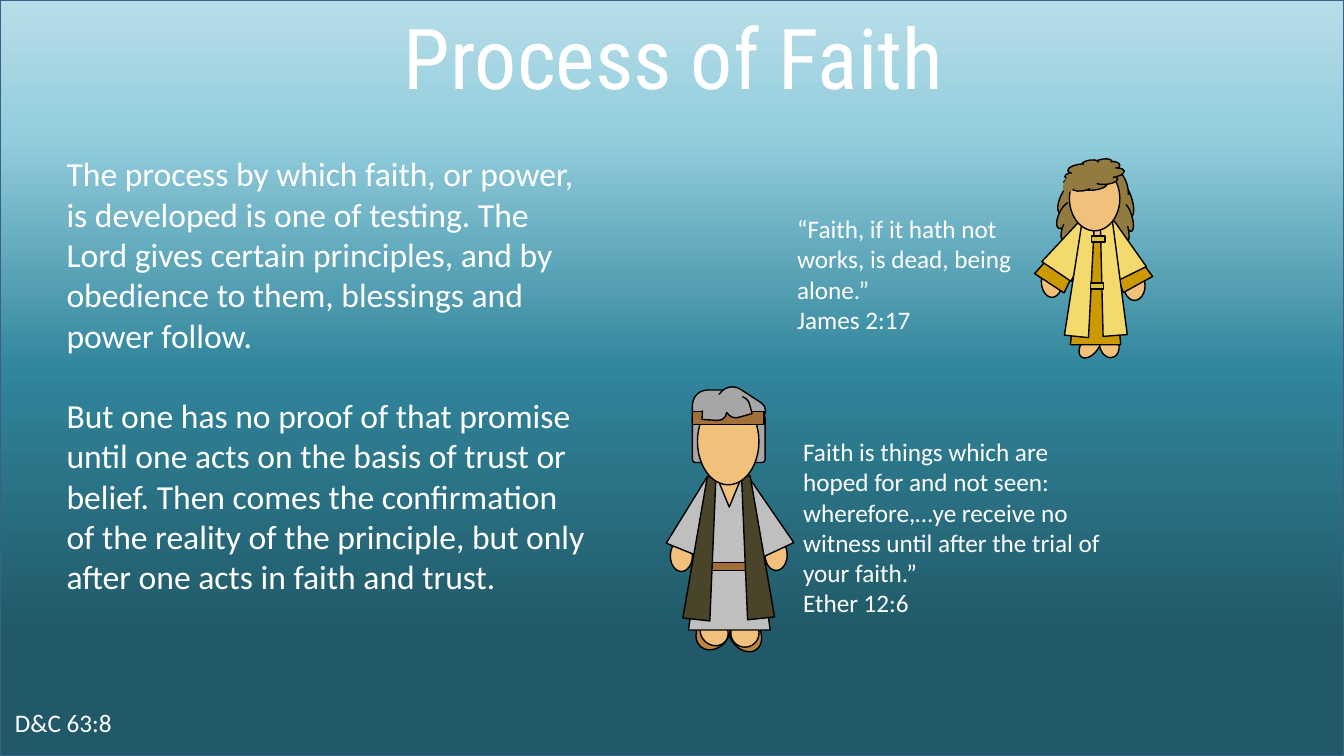
from copy import deepcopy
from typing import NamedTuple, Optional

from lxml import etree
from pptx import Presentation
from pptx import util as u
from pptx.dml.color import RGBColor
from pptx.enum import shapes as s, text as t
from pptx.oxml import ns

Pt = u.Pt
Kind = s.MSO_SHAPE

WHITE = RGBColor(0xFF, 0xFF, 0xFF)
BLACK = RGBColor(0x00, 0x00, 0x00)
BORDER = RGBColor(0x3A, 0x5F, 0x8C)
SKIN = RGBColor(0xF1, 0xC1, 0x7B)
NECK = RGBColor(0xFA, 0xC0, 0x90)
BROWN_HAIR = RGBColor(0x92, 0x7B, 0x40)
GOLD = RGBColor(0xCC, 0x99, 0x00)
YELLOW = RGBColor(0xF4, 0xDA, 0x6C)
CLASP = RGBColor(0xE0, 0xC1, 0x3C)
SANDAL = RGBColor(0xBD, 0x83, 0x43)
ROBE = RGBColor(0xBF, 0xBF, 0xBF)
LEATHER = RGBColor(0xA1, 0x6F, 0x39)
STOLE = RGBColor(0x4A, 0x45, 0x2A)
GRAY_HAIR = RGBColor(0xA6, 0xA6, 0xA6)
SKY_STOPS = (
    (0.0, RGBColor(0xB7, 0xDE, 0xE8)),
    (0.18, RGBColor(0x93, 0xCD, 0xDD)),
    (0.49, RGBColor(0x31, 0x85, 0x9C)),
    (0.84, RGBColor(0x21, 0x59, 0x68)),
)


class Box(NamedTuple):
    left: float
    top: float
    width: float
    height: float


class Part(NamedTuple):
    kind: Kind
    box: Box
    color: RGBColor
    rotation: float = 0
    adjustments: tuple = ()
    flipped: bool = False
    outline: Optional[RGBColor] = BLACK


class Passage(NamedTuple):
    box: Box
    paragraphs: tuple


SLEEVE = (0.341,)
CURL = (0.5, 0)

YOUTH = (
    Part(Kind.CLOUD, Box(756, 119.5, 31.7, 55.4), BROWN_HAIR, 25.3, flipped=True),
    Part(Kind.CLOUD, Box(784.8, 118.8, 24.5, 55.4), BROWN_HAIR, 344.3),
    Part(Kind.OVAL, Box(802.8, 193.7, 15.1, 20.9), SKIN),
    Part(Kind.OVAL, Box(743.8, 189.4, 15.1, 23), SKIN),
    Part(Kind.OVAL, Box(772.6, 236.2, 12.2, 20.9), SKIN, 37.1),
    Part(Kind.OVAL, Box(785.5, 237.6, 13.7, 18), SKIN, 343.7),
    Part(Kind.TRAPEZOID, Box(748.8, 162.7, 25.2, 43.2), GOLD, 33.3),
    Part(Kind.TRAPEZOID, Box(753.1, 157.7, 25.2, 39.6), YELLOW, 34),
    Part(Kind.TRAPEZOID, Box(790.6, 162.7, 23.8, 43.2), GOLD, 331.2),
    Part(Kind.TRAPEZOID, Box(786.2, 158.4, 25.2, 39.6), YELLOW, 333.9),
    Part(Kind.TRAPEZOID, Box(764.6, 159.1, 36, 87.1), GOLD),
    Part(Kind.OVAL, Box(774.7, 152.6, 15.1, 18), NECK),
    Part(Kind.TRAPEZOID, Box(784.8, 157.7, 17.3, 82.1), YELLOW, 355.6),
    Part(Kind.TRAPEZOID, Box(764.6, 157, 17.3, 83.5), YELLOW, 5.9),
    Part(Kind.OVAL, Box(763.9, 118.8, 36, 46.1), SKIN),
    Part(Kind.RECTANGLE, Box(779.8, 168.5, 9.4, 4.3), CLASP),
    Part(Kind.RECTANGLE, Box(779, 202.3, 9.4, 4.3), CLASP),
    Part(Kind.CLOUD, Box(770.4, 103, 21.6, 43.9), BROWN_HAIR, 262.4, flipped=True),
    Part(Kind.OVAL, Box(757.4, 127.4, 13.7, 7.2), BROWN_HAIR, 297.2, outline=BROWN_HAIR),
)

ELDER = (
    Part(Kind.OVAL, Box(521.3, 437.8, 21.6, 28.8), SANDAL, 326.3),
    Part(Kind.OVAL, Box(522, 442.1, 20.2, 20.2), SKIN, 326.3),
    Part(Kind.OVAL, Box(498.2, 437.8, 22.3, 27.4), SANDAL, 39.8),
    Part(Kind.OVAL, Box(499.7, 442.1, 20.9, 18.7), SKIN, 39.8),
    Part(Kind.OVAL, Box(546.5, 385.2, 15.8, 22.3), SKIN),
    Part(Kind.OVAL, Box(478.8, 385.9, 15.8, 22.3), SKIN),
    Part(Kind.TRAPEZOID, Box(529.2, 340.6, 27.4, 55.4), ROBE, 335, SLEEVE),
    Part(Kind.TRAPEZOID, Box(485.3, 339.8, 27.4, 55.4), ROBE, 22.1, SLEEVE),
    Part(Kind.TRAPEZOID, Box(491.8, 342, 58.3, 108), ROBE),
    Part(Kind.ISOSCELES_TRIANGLE, Box(512.6, 342, 16.6, 20.2), SKIN, 180),
    Part(Kind.RECTANGLE, Box(499.7, 401.8, 41.8, 5.8), LEATHER),
    Part(Kind.TRAPEZOID, Box(493.2, 340.6, 19.4, 102.2), STOLE, 6.1, SLEEVE, True),
    Part(Kind.TRAPEZOID, Box(528.5, 339.8, 19.4, 102.2), STOLE, 353.9, SLEEVE),
    Part(Kind.ROUNDED_RECTANGLE, Box(494.6, 296.6, 13, 33.8), GRAY_HAIR),
    Part(Kind.ROUNDED_RECTANGLE, Box(533.5, 296.6, 13, 33.8), GRAY_HAIR),
    Part(Kind.ROUND_2_DIAG_RECTANGLE, Box(494.6, 278.6, 35.3, 21.6), GRAY_HAIR, 0, CURL),
    Part(Kind.ROUND_2_DIAG_RECTANGLE, Box(511.2, 280.1, 35.3, 21.6), GRAY_HAIR, 33.1, (0.5, 0.315)),
    Part(Kind.OVAL, Box(498.2, 284.4, 43.9, 61.9), SKIN),
    Part(Kind.RECTANGLE, Box(494.6, 293.8, 51.1, 9.4), LEATHER),
    Part(Kind.ROUND_2_DIAG_RECTANGLE, Box(501.8, 288, 17.3, 12.2), GRAY_HAIR, 3.8, CURL),
    Part(Kind.ROUND_2_DIAG_RECTANGLE, Box(519.8, 282.2, 14.4, 17.3), GRAY_HAIR, 74.3, CURL),
    Part(Kind.ROUNDED_RECTANGLE, Box(509.8, 273.6, 12.2, 28.8), GRAY_HAIR, 270, outline=None),
)

TITLE = Passage(Box(121, 0, 720, 80), ("Process of Faith",))
BODY = Passage(Box(40.3, 105.8, 386.6, 326.9), (
    "The process by which faith, or power, is developed is one of testing. The Lord gives "
    "certain principles, and by obedience to them, blessings and power follow.",
    "But one has no proof of that promise until one acts on the basis of trust or belief. "
    "Then comes the confirmation of the reality of the principle, but only after one acts "
    "in faith and trust.",
))
SCRIPTURES = (
    Passage(Box(3.6, 501.8, 305.3, 28.8), ("D&C 63:8",)),
    Passage(Box(562.3, 149, 178.6, 94.3), (
        "“Faith, if it hath not works, is dead, being alone.”",
        "James 2:17",
    )),
    Passage(Box(566.6, 308.2, 236.9, 138.2), (
        "Faith is things which are hoped for and not seen: wherefore,…ye receive no witness "
        "until after the trial of your faith.”",
        "Ether 12:6",
    )),
)


def lengths(box: Box) -> list:
    return [Pt(value) for value in box]


def draw_part(container, part: Part):
    shape = container.add_shape(part.kind, *lengths(part.box))
    shape.shadow.inherit = False
    shape.fill.solid()
    shape.fill.fore_color.rgb = part.color
    shape.rotation = part.rotation
    for index, value in enumerate(part.adjustments):
        shape.adjustments[index] = value
    if part.flipped:
        shape._element.spPr.find(ns.qn("a:xfrm")).set("flipH", "1")
    if part.outline is None:
        shape.line.fill.background()
    else:
        shape.line.color.rgb = part.outline
        shape.line.width = Pt(1)
    return shape


def draw_sky(slide) -> None:
    part = Part(Kind.RECTANGLE, Box(0, 0, 960, 540), WHITE, outline=BORDER)
    sky = draw_part(slide.shapes, part)
    sky.fill.gradient()
    sky.fill.gradient_angle = 270
    stop_list = sky._element.spPr.find(".//" + ns.qn("a:gsLst"))
    while len(stop_list) < len(SKY_STOPS):
        stop_list.append(deepcopy(stop_list[0]))
    for stop, (position, color) in zip(sky.fill.gradient_stops, SKY_STOPS):
        stop.position = position
        stop.color.rgb = color
    slide.shapes.title._element.addprevious(sky._element)


def write(shape, passage: Passage, size: float, font: str = "Calibri",
          alignment=t.PP_ALIGN.LEFT, gap: float = 0) -> None:
    shape.left, shape.top, shape.width, shape.height = lengths(passage.box)
    frame = shape.text_frame
    frame.word_wrap = True
    frame.auto_size = t.MSO_AUTO_SIZE.NONE
    frame.vertical_anchor = t.MSO_ANCHOR.TOP
    for index, words in enumerate(passage.paragraphs):
        paragraph = frame.add_paragraph() if index else frame.paragraphs[0]
        paragraph.alignment = alignment
        paragraph.space_before = Pt(gap if index else 0)
        properties = paragraph._p.get_or_add_pPr()
        properties.set("marL", "0")
        properties.set("indent", "0")
        etree.SubElement(properties, ns.qn("a:buNone"))
        run = paragraph.add_run()
        run.text = words
        run.font.name = font
        run.font.size = Pt(size)
        run.font.color.rgb = WHITE


def main() -> None:
    presentation = Presentation()
    presentation.slide_width, presentation.slide_height = Pt(960), Pt(540)
    slide = presentation.slides.add_slide(presentation.slide_layouts[1])
    draw_sky(slide)
    write(slide.shapes.title, TITLE, 60, "Roboto Condensed", t.PP_ALIGN.CENTER)
    write(slide.placeholders[1], BODY, 24, gap=28.8)
    for passage in SCRIPTURES:
        write(slide.shapes.add_textbox(*lengths(passage.box)), passage, 18)
    for figure in (YOUTH, ELDER):
        group = slide.shapes.add_group_shape()
        for part in figure:
            draw_part(group.shapes, part)
    presentation.save("out.pptx")


if __name__ == "__main__":
    main()
